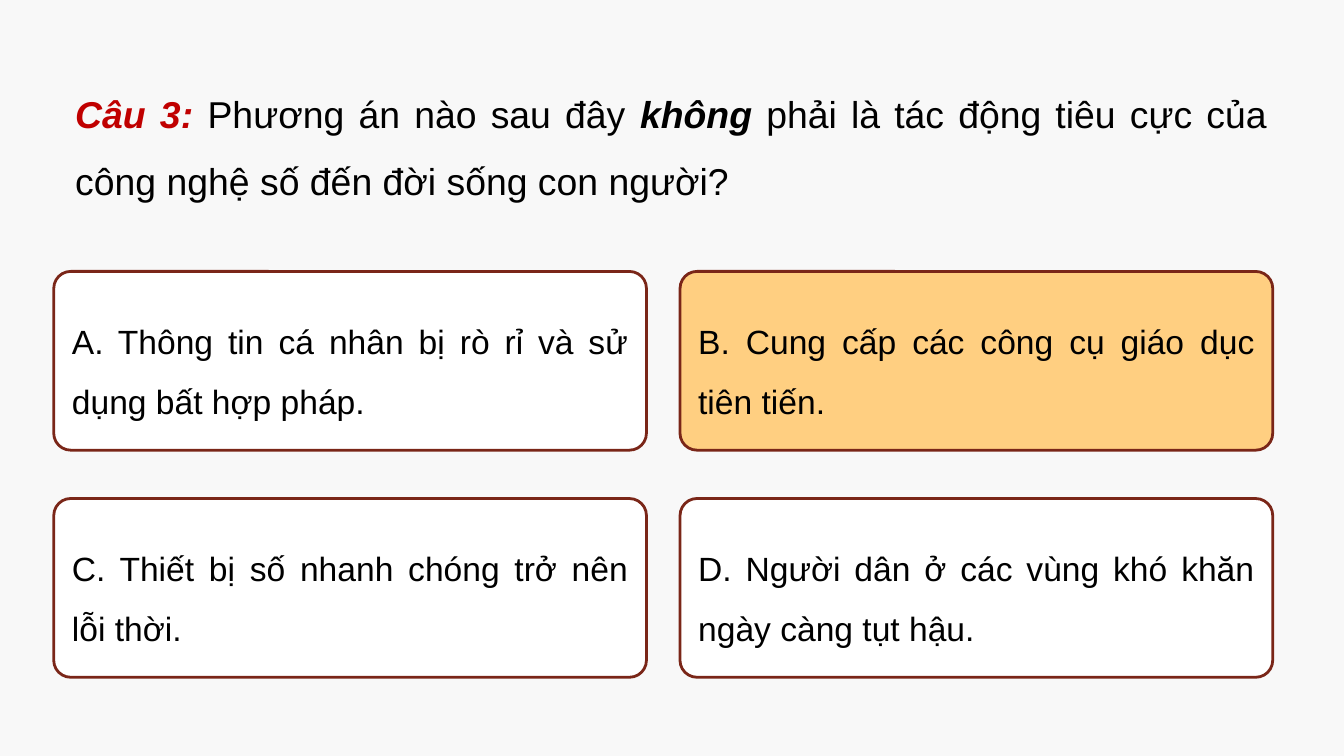
from pptx import Presentation
from pptx.dml.color import RGBColor
from pptx.enum.shapes import MSO_SHAPE
from pptx.enum.text import MSO_ANCHOR, MSO_AUTO_SIZE, PP_ALIGN
from pptx.util import Inches, Pt

ROUND = MSO_SHAPE.ROUNDED_RECTANGLE
TOP, MIDDLE = MSO_ANCHOR.TOP, MSO_ANCHOR.MIDDLE
JUSTIFY = PP_ALIGN.JUSTIFY
GROW = MSO_AUTO_SIZE.SHAPE_TO_FIT_TEXT

PAPER = RGBColor(0xF8, 0xF8, 0xF8)
WHITE = RGBColor(0xFF, 0xFF, 0xFF)
BLACK = RGBColor(0, 0, 0)
RED = RGBColor(0xC0, 0, 0)
BROWN = RGBColor(0x7A, 0x26, 0x18)
AMBER = RGBColor(0xFF, 0xCF, 0x81)

# Runs: text, colour, bold and italic
QUESTION = [
    ("Câu 3: ", RED, True),
    ("Phương án nào sau đây ", BLACK, False),
    ("không", BLACK, True),
    (" phải là tác động tiêu cực của công nghệ số đến đời sống con người?",
     BLACK, False),
]
ANSWERS = [
    "A. Thông tin cá nhân bị rò rỉ và sử dụng bất hợp pháp.",
    "B. Cung cấp các công cụ giáo dục tiên tiến.",
    "C. Thiết bị số nhanh chóng trở nên lỗi thời.",
    "D. Người dân ở các vùng khó khăn ngày càng tụt hậu.",
]
CORRECT = 1

COLS = 2
LEFT, UPPER = 0.4, 2.02
WIDTH, HEIGHT = 4.41, 1.33
STEP_X, STEP_Y = 4.66, 1.69


def write(frame, runs, size, anchor):
    frame.word_wrap = True
    frame.vertical_anchor = anchor
    para = frame.paragraphs[0]
    para.alignment = JUSTIFY
    para.line_spacing = 1.5
    for text, color, strong in runs:
        run = para.add_run()
        run.text = text
        font = run.font
        font.name = "Arial"
        font.size = Pt(size)
        font.color.rgb = color
        font.bold = font.italic = strong


def add_card(slide, index, text):
    row, col = divmod(index, COLS)
    card = slide.shapes.add_shape(
        ROUND, Inches(LEFT + col * STEP_X), Inches(UPPER + row * STEP_Y),
        Inches(WIDTH), Inches(HEIGHT))
    card.adjustments[0] = 0.095
    card.shadow.inherit = False
    card.fill.solid()
    card.fill.fore_color.rgb = AMBER if index == CORRECT else WHITE
    card.line.color.rgb = BROWN
    card.line.width = Pt(1.5)
    write(card.text_frame, [(text, BLACK, False)], 18, MIDDLE)


def main():
    deck = Presentation()
    deck.slide_width = Inches(10)
    deck.slide_height = Inches(10 * 9 / 16)
    slide = deck.slides.add_slide(deck.slide_layouts[5])
    slide.background.fill.solid()
    slide.background.fill.fore_color.rgb = PAPER

    title = slide.shapes.title
    title.left, title.top = Inches(0.46), Inches(0.46)
    title.width, title.height = Inches(9.07), Inches(1.05)
    title.text_frame.auto_size = GROW
    write(title.text_frame, QUESTION, 20, TOP)

    for index, text in enumerate(ANSWERS):
        add_card(slide, index, text)
    deck.save("out.pptx")


if __name__ == "__main__":
    main()
